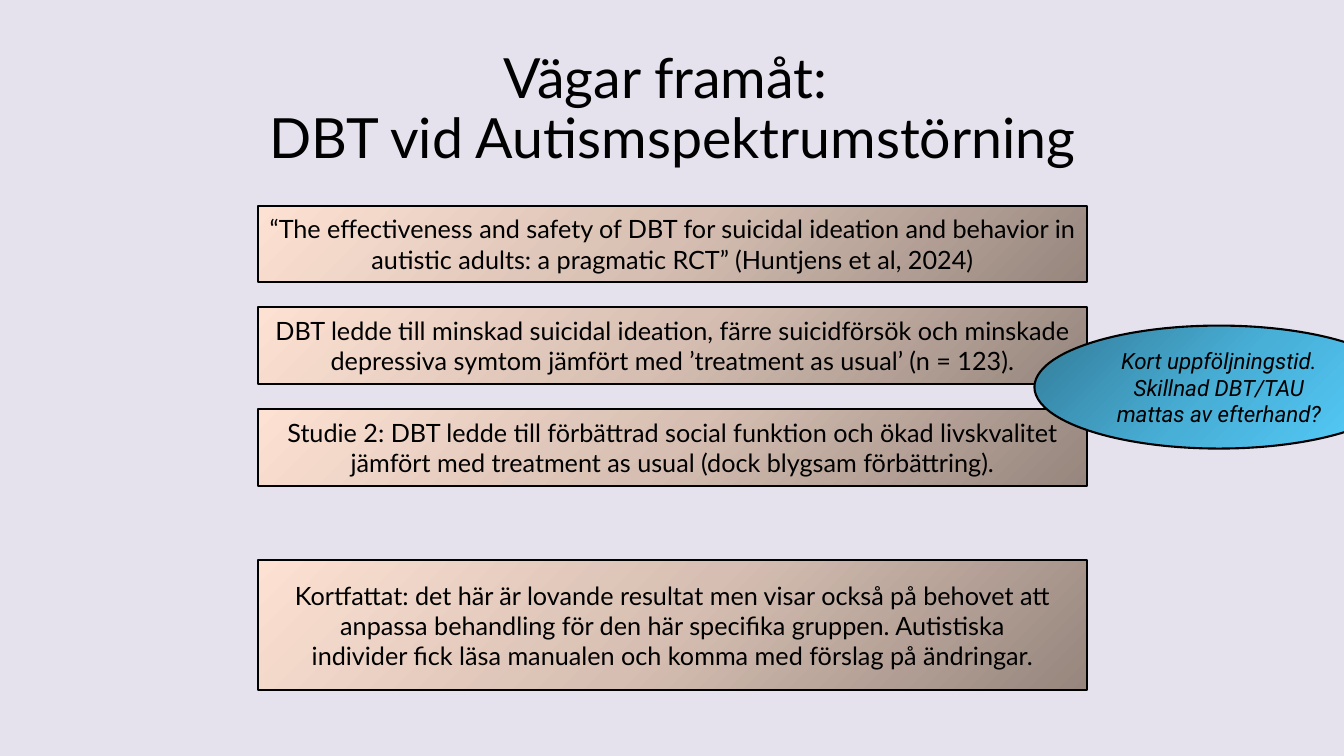
from dataclasses import dataclass

from pptx import Presentation
from pptx import oxml, util as u
from pptx.dml.color import RGBColor
from pptx.enum import shapes, text
from pptx.oxml import ns
from pptx.shapes import autoshape

BACKGROUND = RGBColor(0xE5, 0xE2, 0xEE)
BLACK = RGBColor(0x00, 0x00, 0x00)
BROWN = RGBColor(0x96, 0x86, 0x7D)
SAND = RGBColor(0xD6, 0xBE, 0xB2)
PEACH = RGBColor(0xFD, 0xE2, 0xD3)
DARK_BLUE = RGBColor(0x33, 0x7B, 0x97)
MID_BLUE = RGBColor(0x48, 0xAF, 0xD7)
LIGHT_BLUE = RGBColor(0x56, 0xD0, 0xFF)

FROM_CORNER = (
    '<a:path path="circle"><a:fillToRect l="100000" t="100000"/></a:path>'
)
DIAGONAL = '<a:lin ang="2700000" scaled="1"/>'


@dataclass(frozen=True)
class TextStyle:
    font: str
    size: float
    italic: bool = False
    line_spacing: float = 1.0


@dataclass(frozen=True)
class Gradient:
    colors: tuple[RGBColor, ...]
    direction: str


@dataclass(frozen=True)
class Panel:
    left: float
    top: float
    width: float
    height: float
    paragraphs: tuple[str, ...]
    kind: shapes.MSO_SHAPE = shapes.MSO_SHAPE.RECTANGLE
    gradient: Gradient = Gradient((BROWN, SAND, PEACH), FROM_CORNER)
    style: TextStyle = TextStyle("Lato", 18)


TITLE_STYLE = TextStyle("Lato", 39.6, line_spacing=0.9)
TITLE_LINES = ("Vägar framåt: ", "DBT vid Autismspektrumstörning")

BOX_LEFT, BOX_WIDTH = 2.56, 8.22
FINDING_TOP, FINDING_HEIGHT, FINDING_PITCH = 2.04, 0.76, 1.01
FINDINGS = (
    "“The effectiveness and safety of DBT for suicidal ideation and behavior "
    "in autistic adults: a pragmatic RCT” (Huntjens et al, 2024)",
    "DBT ledde till minskad suicidal ideation, färre suicidförsök och minskade "
    "depressiva symtom jämfört med ’treatment as usual’ (n = 123).",
    "Studie 2: DBT ledde till förbättrad social funktion och ökad livskvalitet "
    "jämfört med treatment as usual (dock blygsam förbättring).",
)
SUMMARY = Panel(
    BOX_LEFT, 5.56, BOX_WIDTH, 1.29,
    (
        "Kortfattat: det här är lovande resultat men visar också på behovet att "
        "anpassa behandling för den här specifika gruppen. Autistiska",
        "individer fick läsa manualen och komma med förslag på ändringar.",
    ),
)
CAVEAT = Panel(
    10.26, 3.23, 3.66, 1.22,
    ("Kort uppföljningstid. Skillnad DBT/TAU mattas av efterhand?",),
    shapes.MSO_SHAPE.OVAL,
    Gradient((DARK_BLUE, MID_BLUE, LIGHT_BLUE), DIAGONAL),
    TextStyle("Roboto", 16, italic=True),
)


def add_run(paragraph, content: str, style: TextStyle) -> None:
    run = paragraph.add_run()
    run.text = content
    run.font.name = style.font
    run.font.size = u.Pt(style.size)
    run.font.italic = style.italic
    run.font.color.rgb = BLACK


def prepare_frame(frame) -> None:
    frame.word_wrap = True
    frame.auto_size = text.MSO_AUTO_SIZE.NONE
    frame.vertical_anchor = text.MSO_ANCHOR.MIDDLE


def apply_gradient(shape: autoshape.Shape, gradient: Gradient) -> None:
    """Fill the shape with evenly spaced colour stops."""
    step = 100000 // (len(gradient.colors) - 1)
    stops = "".join(
        f'<a:gs pos="{index * step}"><a:srgbClr val="{color}"/></a:gs>'
        for index, color in enumerate(gradient.colors)
    )
    fill = oxml.parse_xml(
        f'<a:gradFill {ns.nsdecls("a")} rotWithShape="1">'
        f"<a:gsLst>{stops}</a:gsLst>{gradient.direction}</a:gradFill>"
    )
    shape.element.spPr.find(ns.qn("a:prstGeom")).addnext(fill)


def add_title(slide) -> None:
    box = slide.shapes.add_textbox(
        u.Inches(0.92), u.Inches(0.65), u.Inches(11.5), u.Inches(0.89)
    )
    prepare_frame(box.text_frame)
    paragraph = box.text_frame.paragraphs[0]
    paragraph.alignment = text.PP_ALIGN.CENTER
    paragraph.line_spacing = TITLE_STYLE.line_spacing
    for index, line in enumerate(TITLE_LINES):
        if index:
            paragraph.add_line_break()
        add_run(paragraph, line, TITLE_STYLE)


def add_panel(slide, panel: Panel) -> None:
    shape = slide.shapes.add_shape(
        panel.kind,
        u.Inches(panel.left), u.Inches(panel.top),
        u.Inches(panel.width), u.Inches(panel.height),
    )
    apply_gradient(shape, panel.gradient)
    shape.line.color.rgb = BLACK
    shape.line.width = u.Pt(1.5)
    shape.shadow.inherit = False
    frame = shape.text_frame
    prepare_frame(frame)
    for index, content in enumerate(panel.paragraphs):
        paragraph = frame.add_paragraph() if index else frame.paragraphs[0]
        paragraph.alignment = text.PP_ALIGN.CENTER
        paragraph.line_spacing = panel.style.line_spacing
        add_run(paragraph, content, panel.style)


def main() -> None:
    presentation = Presentation()
    presentation.slide_width = u.Inches(13.33)
    presentation.slide_height = u.Inches(7.5)
    slide = presentation.slides.add_slide(presentation.slide_layouts[6])
    slide.background.fill.solid()
    slide.background.fill.fore_color.rgb = BACKGROUND

    add_title(slide)
    for index, finding in enumerate(FINDINGS):
        top = FINDING_TOP + index * FINDING_PITCH
        add_panel(slide, Panel(BOX_LEFT, top, BOX_WIDTH, FINDING_HEIGHT, (finding,)))
    add_panel(slide, SUMMARY)
    add_panel(slide, CAVEAT)
    presentation.save("out.pptx")


if __name__ == "__main__":
    main()
